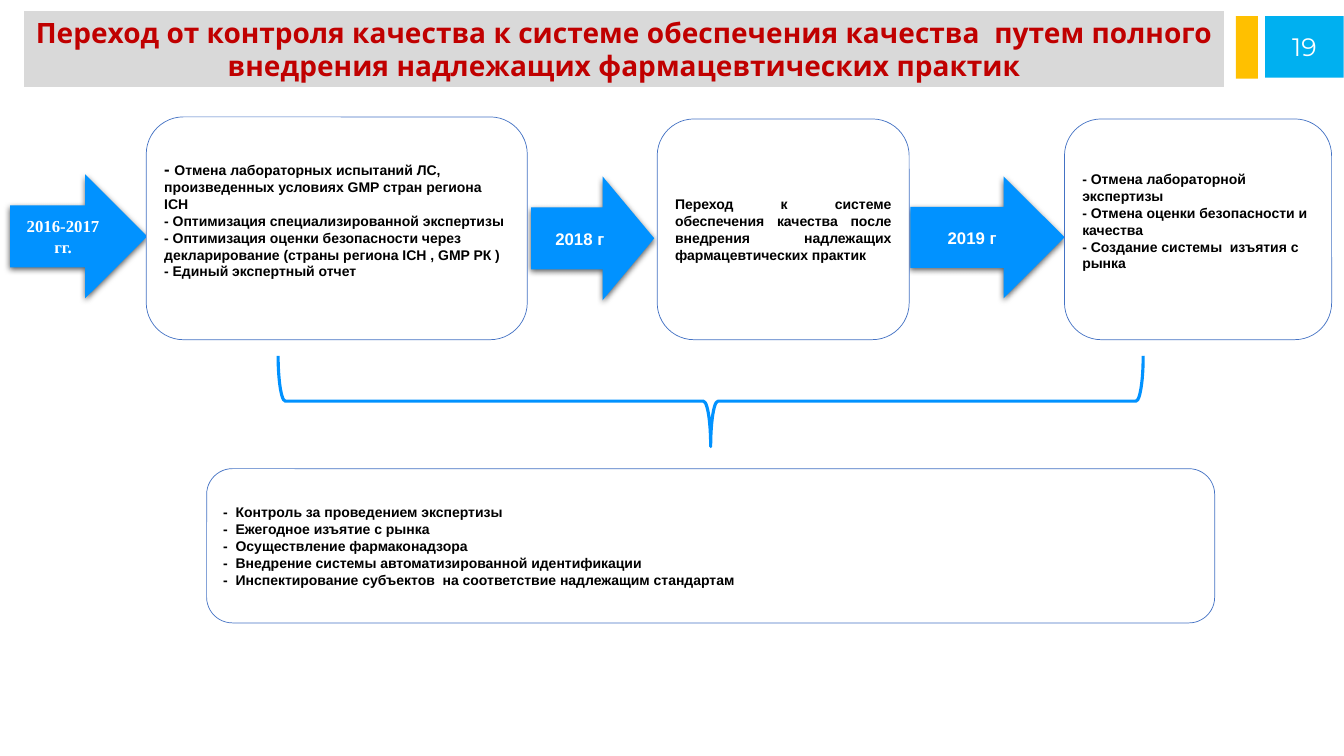
import pptx
import pptx.util
import pptx.dml.color
import pptx.enum.shapes
import pptx.enum.text
import pptx.oxml
import pptx.oxml.ns

Color = pptx.dml.color.RGBColor
Kind = pptx.enum.shapes.MSO_SHAPE
Align = pptx.enum.text.PP_ALIGN
Anchor = pptx.enum.text.MSO_ANCHOR

WHITE = Color(0xFF, 0xFF, 0xFF)
BLACK = Color(0x00, 0x00, 0x00)
GREY = Color(0xD9, 0xD9, 0xD9)
RED = Color(0xC0, 0x00, 0x00)
ARROW_BLUE = Color(0x01, 0x92, 0xFF)
OUTLINE_BLUE = Color(0x44, 0x72, 0xC4)
YELLOW = Color(0xFF, 0xC0, 0x00)
NUMBER_BLUE = Color(0x00, 0xB0, 0xF0)

TITLE = ("Переход от контроля качества к системе обеспечения качества  путем полного "
         "внедрения надлежащих фармацевтических практик")
TITLE_AREA = (1.73, 1.33, 89.4, 10.27)
PAGE_NUMBER = "19"

ARROWS = [
    ("2016-2017 гг.", "Times New Roman", (0.75, 23.07, 10.2, 16.4), 0.5),
    ("2018 г", "Arial", (39.53, 23.33, 9.15, 16.4), 0.42),
    ("2019 г", "Arial", (67.73, 23.33, 11.48, 16.13), 0.5),
]

CARDS = [
    ([[("- ", 12), ("Отмена лабораторных испытаний ЛС, произведенных условиях GMP стран региона ICH", 10)],
      "- Оптимизация специализированной экспертизы",
      "- Оптимизация оценки безопасности через декларирование (страны региона ICH , GMP РК )",
      "- Единый экспертный отчет"],
     (10.88, 15.47, 28.35, 29.47), Align.LEFT, (0.07, 0.06, 0.07, 0.24)),
    (["Переход к системе обеспечения качества после внедрения надлежащих фармацевтических практик"],
     (48.9, 15.73, 18.75, 29.2), Align.JUSTIFY, (0.07, 0.06, 0.07, 0.06)),
    (["- Отмена лабораторной экспертизы",
      "- Отмена оценки безопасности и качества",
      "- Создание системы  изъятия с рынка"],
     (79.2, 15.73, 19.88, 29.2), Align.LEFT, (0.07, 0.06, 0.07, 0.22)),
    (["-  Контроль за проведением экспертизы",
      "-  Ежегодное изъятие с рынка",
      "-  Осуществление фармаконадзора",
      "-  Внедрение системы автоматизированной идентификации",
      "-  Инспектирование субъектов  на соответствие надлежащим стандартам"],
     (15.38, 62, 75, 20.4), Align.LEFT, (0.09, 0.06, 0.07, 0.06)),
]

BRACE_AREA = (49.5, -4.13, 6.75, 114.4)
YELLOW_AREA = (91.95, 2.13, 1.65, 8.27)
NUMBER_AREA = (94.13, 2.13, 5.85, 8.13)

deck = pptx.Presentation()
deck.slide_width = pptx.util.Inches(13.33)
deck.slide_height = pptx.util.Inches(7.5)
page = deck.slides.add_slide(deck.slide_layouts[5])


def place(area):
    sides = (deck.slide_width, deck.slide_height) * 2
    return [round(share * side / 100) for share, side in zip(area, sides)]


def paint(shape, fill, line=None, width=1):
    shape.fill.solid()
    shape.fill.fore_color.rgb = fill
    if line is None:
        shape.line.fill.background()
    else:
        shape.line.color.rgb = line
        shape.line.width = pptx.util.Pt(width)


def add_box(kind, area, fill, line=None, width=1):
    box = page.shapes.add_shape(kind, *place(area))
    box.shadow.inherit = False
    paint(box, fill, line, width)
    return box


def write(shape, paragraphs, size=10, font="Arial", color=BLACK, bold=True,
          align=Align.CENTER, anchor=Anchor.MIDDLE, insets=(0.1, 0.05, 0.1, 0.05)):
    frame = shape.text_frame
    frame.word_wrap = True
    frame.auto_size = pptx.enum.text.MSO_AUTO_SIZE.NONE
    frame.vertical_anchor = anchor
    (frame.margin_left, frame.margin_top,
     frame.margin_right, frame.margin_bottom) = map(pptx.util.Inches, insets)
    for index, content in enumerate(paragraphs):
        para = frame.add_paragraph() if index else frame.paragraphs[0]
        para.alignment = align
        spans = [(content, size)] if isinstance(content, str) else content
        for text, span_size in spans:
            span = para.add_run()
            span.text = text
            span.font.size = pptx.util.Pt(span_size)
            span.font.name = font
            span.font.bold = bold
            span.font.color.rgb = color


def add_shadow(shape):
    effects = shape._element.spPr.find(pptx.oxml.ns.qn("a:effectLst"))
    effects.append(pptx.oxml.parse_xml(
        f'<a:outerShdw {pptx.oxml.ns.nsdecls("a")} blurRad="57150" dist="19050" '
        'dir="5400000" algn="ctr" rotWithShape="0"><a:srgbClr val="000000">'
        '<a:alpha val="63000"/></a:srgbClr></a:outerShdw>'))


title = page.shapes.title
title.left, title.top, title.width, title.height = place(TITLE_AREA)
paint(title, GREY, WHITE, 1.5)
write(title, [TITLE], size=20, font="League Spartan", color=RED, anchor=Anchor.TOP)

for label, font, area, head in ARROWS:
    arrow = add_box(Kind.RIGHT_ARROW, area, ARROW_BLUE)
    arrow.adjustments[1] = head
    add_shadow(arrow)
    write(arrow, [label], size=12, font=font, color=WHITE)

for lines, area, align, insets in CARDS:
    card = add_box(Kind.ROUNDED_RECTANGLE, area, WHITE, OUTLINE_BLUE, 0.5)
    write(card, lines, align=align, insets=insets)

brace = add_box(Kind.RIGHT_BRACE, BRACE_AREA, WHITE, ARROW_BLUE, 2.25)
brace.rotation = 90
brace.adjustments[0] = 0.08
brace.adjustments[1] = 0.5

add_box(Kind.RECTANGLE, YELLOW_AREA, YELLOW)
number = add_box(Kind.RECTANGLE, NUMBER_AREA, NUMBER_BLUE)
write(number, [PAGE_NUMBER], size=18, font="Montserrat", color=WHITE, bold=False)

deck.save("out.pptx")
